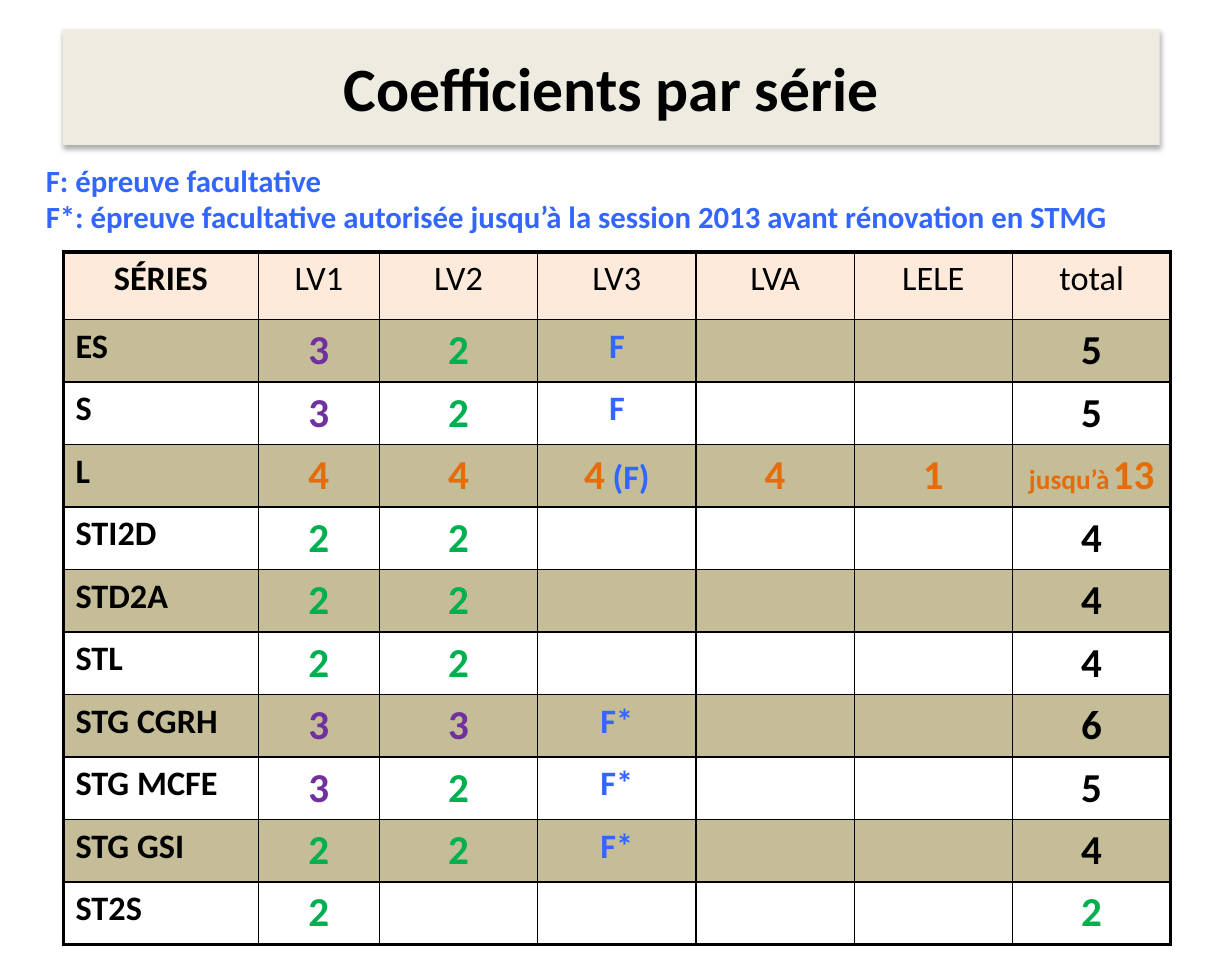
from lxml.etree import SubElement
from pptx import Presentation
from pptx.dml.color import RGBColor
from pptx.enum.shapes import MSO_SHAPE
from pptx.enum.text import MSO_ANCHOR, PP_ALIGN
from pptx.oxml.ns import qn
from pptx.util import Pt

BLACK = RGBColor(0x00, 0x00, 0x00)
CREAM = RGBColor(0xEE, 0xEC, 0xE1)
PEACH = RGBColor(0xFD, 0xEA, 0xDA)
KHAKI = RGBColor(0xC4, 0xBD, 0x97)
VIOLET = RGBColor(0x70, 0x30, 0xA0)
GREEN = RGBColor(0x00, 0xB0, 0x50)
BLUE = RGBColor(0x33, 0x66, 0xFF)
ORANGE = RGBColor(0xE4, 0x6C, 0x0A)

COEFFICIENT_COLORS = {"1": ORANGE, "2": GREEN, "3": VIOLET, "4": ORANGE}
LANGUAGES = ["LV1", "LV2", "LV3", "LVA", "LELE"]
COLUMN_WIDTHS = [114, 70.8] + [92.5] * 5
HEADER_HEIGHT, SERIES_HEIGHT = 39.6, 36
OUTER_LINE, INNER_LINE = 2.25, 1

SERIES = [
    ("ES", ["3", "2", "F", "", ""], "5"),
    ("S", ["3", "2", "F", "", ""], "5"),
    ("L", ["4", "4", "4 (F)", "4", "1"], "jusqu’à 13"),
    ("STI2D", ["2", "2", "", "", ""], "4"),
    ("STD2A", ["2", "2", "", "", ""], "4"),
    ("STL", ["2", "2", "", "", ""], "4"),
    ("STG CGRH", ["3", "3", "F*", "", ""], "6"),
    ("STG MCFE", ["3", "2", "F*", "", ""], "5"),
    ("STG GSI", ["2", "2", "F*", "", ""], "4"),
    ("ST2S", ["2", "", "", "", ""], "2"),
]


def write(paragraph, text, size=20, color=BLACK, bold=True, align=PP_ALIGN.CENTER):
    paragraph.alignment = align
    run = paragraph.add_run()
    run.text = text
    run.font.name = "Calibri"
    run.font.size = Pt(size)
    run.font.bold = bold
    run.font.color.rgb = color


def add_shadow(shape, color, opacity, blur, distance, angle):
    effects = SubElement(shape._element.spPr, qn("a:effectLst"))
    shadow = SubElement(effects, qn("a:outerShdw"), blurRad=str(Pt(blur)),
                        dist=str(Pt(distance)), dir=str(angle * 60000), rotWithShape="0")
    shade = SubElement(shadow, qn("a:srgbClr"), val=str(color))
    SubElement(shade, qn("a:alpha"), val=str(opacity * 1000))


def add_title(slide, text):
    banner = slide.shapes.add_shape(MSO_SHAPE.RECTANGLE, Pt(37), Pt(17), Pt(640.8), Pt(67.7))
    banner.fill.solid()
    banner.fill.fore_color.rgb = CREAM
    banner.line.fill.background()
    add_shadow(banner, BLACK, opacity=32, blur=3.5, distance=2.2, angle=90)
    banner.text_frame.vertical_anchor = MSO_ANCHOR.MIDDLE
    write(banner.text_frame.paragraphs[0], text, size=36)


def add_legend(slide, lines):
    legend = slide.shapes.add_textbox(Pt(19.7), Pt(90.7), Pt(686.2), Pt(51.1)).text_frame
    legend.word_wrap = True
    for index, line in enumerate(lines):
        paragraph = legend.add_paragraph() if index else legend.paragraphs[0]
        write(paragraph, line, size=18, color=BLUE, align=PP_ALIGN.LEFT)


def style_cell(cell, fill, outer_sides):
    properties = cell._tc.get_or_add_tcPr()
    for side in "LRTB":
        width = OUTER_LINE if side in outer_sides else INNER_LINE
        border = SubElement(properties, qn(f"a:ln{side}"), w=str(Pt(width)))
        SubElement(SubElement(border, qn("a:solidFill")), qn("a:srgbClr"), val=str(BLACK))
    if fill is None:
        cell.fill.background()
    else:
        cell.fill.solid()
        cell.fill.fore_color.rgb = fill


def write_coefficient(paragraph, text):
    number, _, option = text.partition(" ")
    if number.startswith("F"):
        write(paragraph, number, color=BLUE)
    elif number:
        write(paragraph, number, size=24, color=COEFFICIENT_COLORS[number])
    if option:
        write(paragraph, " ", color=ORANGE)
        write(paragraph, option, color=BLUE)


def write_total(paragraph, text):
    prefix, _, number = text.rpartition(" ")
    color = ORANGE if prefix else GREEN if number == "2" else BLACK
    if prefix:
        write(paragraph, prefix, size=16, color=color)
        write(paragraph, " ", size=8, color=color)
    write(paragraph, number, size=24, color=color)


def add_coefficients(slide):
    row_count, column_count = len(SERIES) + 1, len(COLUMN_WIDTHS)
    table = slide.shapes.add_table(
        row_count, column_count, Pt(37), Pt(147.3), Pt(sum(COLUMN_WIDTHS)),
        Pt(HEADER_HEIGHT + SERIES_HEIGHT * len(SERIES))).table
    table.first_row = table.horz_banding = False
    for column, width in zip(table.columns, COLUMN_WIDTHS):
        column.width = Pt(width)
    for r, row in enumerate(table.rows):
        row.height = Pt(SERIES_HEIGHT if r else HEADER_HEIGHT)
        fill = PEACH if r == 0 else KHAKI if r % 2 else None
        for c, cell in enumerate(row.cells):
            edges = {"L": c == 0, "R": c == column_count - 1,
                     "T": r == 0, "B": r == row_count - 1}
            style_cell(cell, fill, [side for side, is_outer in edges.items() if is_outer])

    for c, heading in enumerate(["SÉRIES", *LANGUAGES, "total"]):
        write(table.cell(0, c).text_frame.paragraphs[0], heading, bold=c == 0)
    for r, (name, coefficients, total) in enumerate(SERIES, start=1):
        first, *middle, last = [cell.text_frame.paragraphs[0] for cell in table.rows[r].cells]
        write(first, name, align=PP_ALIGN.LEFT)
        for paragraph, coefficient in zip(middle, coefficients):
            write_coefficient(paragraph, coefficient)
        write_total(last, total)


def main():
    presentation = Presentation()
    presentation.slide_width, presentation.slide_height = Pt(720), Pt(567)
    slide = presentation.slides.add_slide(presentation.slide_layouts[6])
    add_coefficients(slide)
    add_title(slide, "Coefficients par série")
    add_legend(slide, [
        "F: épreuve facultative",
        "F*: épreuve facultative autorisée jusqu’à la session 2013 avant rénovation en STMG",
    ])
    presentation.save("out.pptx")


if __name__ == "__main__":
    main()
